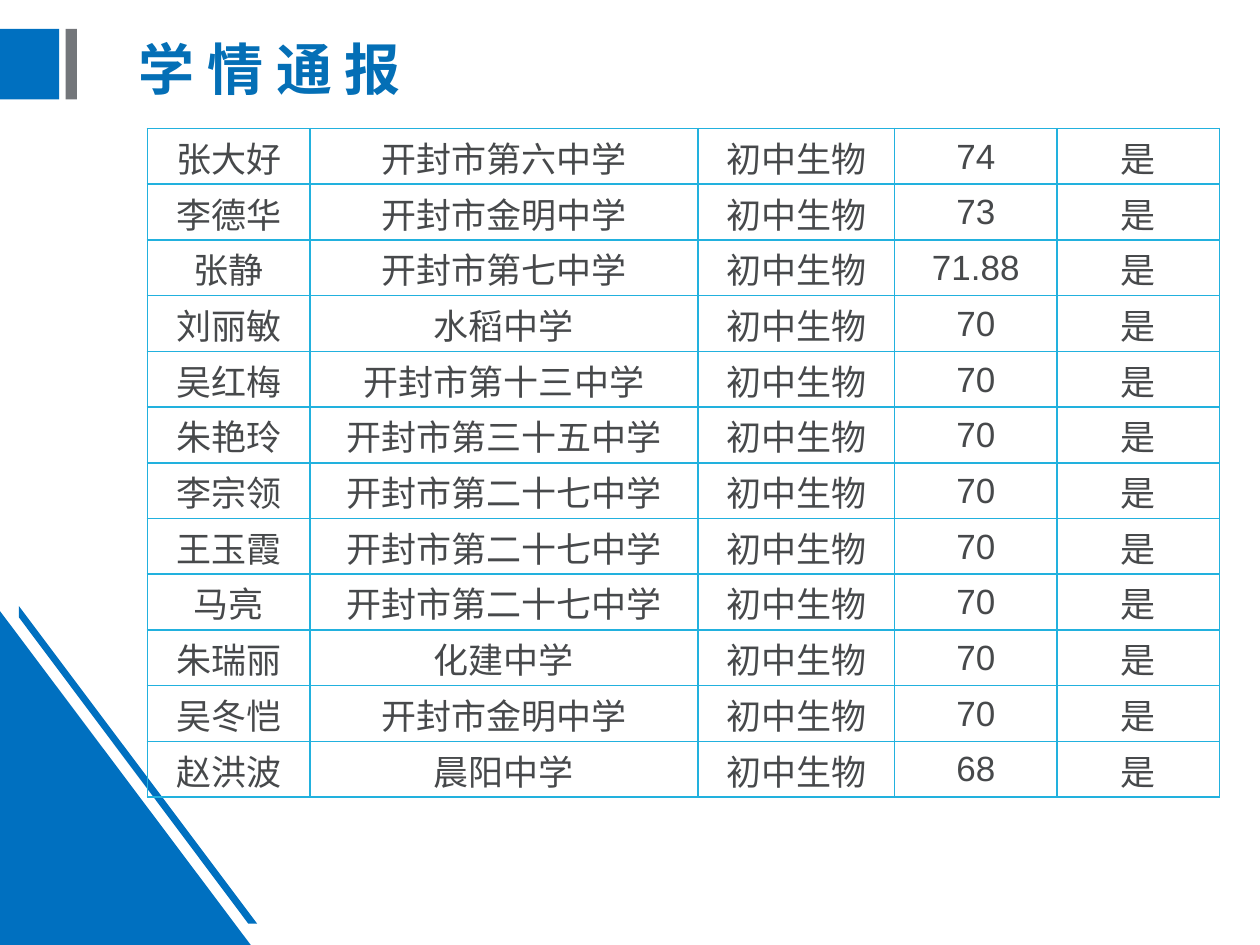
from pptx import Presentation
from pptx.dml.color import RGBColor
from pptx.enum.shapes import MSO_SHAPE
from pptx.enum.text import MSO_ANCHOR, PP_ALIGN
from pptx.oxml import parse_xml
from pptx.oxml.ns import nsdecls
from pptx.util import Inches, Pt

BLUE, GRAY = "0070C0", "73767A"
INK, HEAD, EDGE = "47494B", "046FB6", "22B1DE"
HAN = "Noto Sans CJK SC"


def paint(fmt, color):
    """Give a fill or a font a solid colour."""
    if hasattr(fmt, "solid"):
        fmt.solid()
        fmt.fore_color.rgb = RGBColor.from_string(color)
    else:
        fmt.color.rgb = RGBColor.from_string(color)


def style(para, text, color, **form):
    """Add a run with the given font, and a Chinese font beside it."""
    run = para.add_run()
    run.text = text
    for key, val in form.items():
        setattr(run.font, key, val)
    paint(run.font, color)
    run.font._element.append(
        parse_xml(f'<a:ea {nsdecls("a")} typeface="{HAN}"/>'))


deck = Presentation()
deck.slide_width, deck.slide_height = Inches(10), Inches(7.5)
slide = deck.slides.add_slide(deck.slide_layouts[5])
shapes = slide.shapes

# Title bars and corner triangle
parts = []
for kind, color, *box in [
    (MSO_SHAPE.RECTANGLE, BLUE, 0, 0.23, 0.47, 0.56),
    (MSO_SHAPE.RECTANGLE, GRAY, 0.52, 0.23, 0.09, 0.56),
    (MSO_SHAPE.RIGHT_TRIANGLE, BLUE, 0, 4.85, 1.99, 2.65),
]:
    part = shapes.add_shape(kind, *map(Inches, box))
    paint(part.fill, color)
    parts.append(part)

# Slanted stripe beside the triangle
pen = shapes.build_freeform(Inches(0.15), Inches(4.81))
pen.add_line_segments([(Inches(x), Inches(y)) for x, y in
                       [(2.04, 7.33), (1.97, 7.33), (0.15, 4.9)]])
stripe = pen.convert_to_shape()
paint(stripe.fill, BLUE)
for part in parts + [stripe]:
    part.line.fill.background()
    part.shadow.inherit = False

# Results table
rows = [
    ("张大好", "开封市第六中学", "74"),
    ("李德华", "开封市金明中学", "73"),
    ("张静", "开封市第七中学", "71.88"),
    ("刘丽敏", "水稻中学", "70"),
    ("吴红梅", "开封市第十三中学", "70"),
    ("朱艳玲", "开封市第三十五中学", "70"),
    ("李宗领", "开封市第二十七中学", "70"),
    ("王玉霞", "开封市第二十七中学", "70"),
    ("马亮", "开封市第二十七中学", "70"),
    ("朱瑞丽", "化建中学", "70"),
    ("吴冬恺", "开封市金明中学", "70"),
    ("赵洪波", "晨阳中学", "68"),
]
widths = [1.29, 3.08, 1.56, 1.29, 1.29]
cell_form = {
    "margin_left": Inches(0.01), "margin_right": Inches(0.01),
    "margin_top": Inches(0.01), "margin_bottom": 0,
    "vertical_anchor": MSO_ANCHOR.MIDDLE,
}
table = shapes.add_table(len(rows), len(widths), Inches(1.17), Inches(1.02),
                         Inches(sum(widths)), Inches(5.31)).table
table.first_row = table.horz_banding = False
for col, width in zip(table.columns, widths):
    col.width = Inches(width)
for r, (name, school, score) in enumerate(rows):
    for c, text in enumerate((name, school, "初中生物", score, "是")):
        cell = table.cell(r, c)
        for key, val in cell_form.items():
            setattr(cell, key, val)
        para = cell.text_frame.paragraphs[0]
        para.alignment = PP_ALIGN.CENTER
        style(para, text, INK, size=Pt(20), name="Arial")
        props = cell._tc.get_or_add_tcPr()
        for side in ("lnL", "lnR", "lnT", "lnB"):
            props.append(parse_xml(
                f'<a:{side} {nsdecls("a")} w="{Pt(1)}"><a:solidFill>'
                f'<a:srgbClr val="{EDGE}"/></a:solidFill></a:{side}>'))
        cell.fill.background()

# Title
title = shapes.title
title.left, title.top = Inches(1), Inches(0.14)
title.width, title.height = Inches(4.47), Inches(0.87)
title.text_frame.vertical_anchor = MSO_ANCHOR.MIDDLE
para = title.text_frame.paragraphs[0]
para.alignment = PP_ALIGN.LEFT
para.line_spacing = 0.9
style(para, "学 情 通 报", HEAD, size=Pt(32), bold=True, name=HAN)

deck.save("out.pptx")
